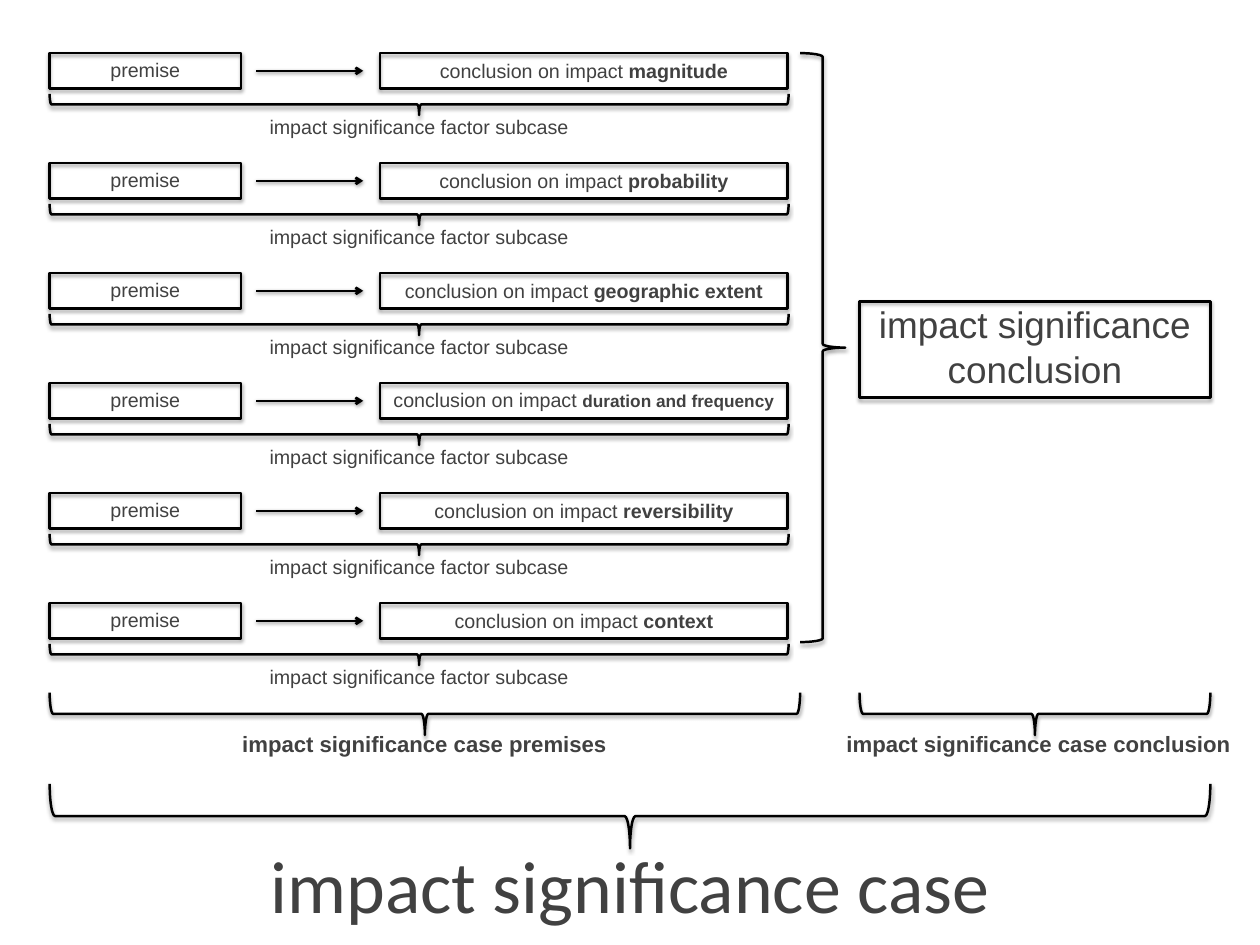
from dataclasses import dataclass
from lxml.etree import SubElement
from pptx import Presentation
from pptx.dml.color import RGBColor
from pptx.enum.shapes import MSO_CONNECTOR, MSO_SHAPE
from pptx.enum.text import MSO_ANCHOR, MSO_AUTO_SIZE, PP_ALIGN
from pptx.oxml.ns import qn
from pptx.util import Inches, Pt

FACTORS = [
    ("magnitude", None),
    ("probability", None),
    ("geographic extent", None),
    ("duration and frequency", 14),
    ("reversibility", None),
    ("context", None),
]
PREMISE = "premise"
LEAD = "conclusion on impact "
SUBCASE = "impact significance factor subcase"
RESULT = "impact significance conclusion"
PARTS = [
    ("impact significance case premises", 0.56, 8.47, 0.97, 7.64),
    ("impact significance case conclusion", 9.7, 3.96, 9.16, 5.12),
]
CASE = "impact significance case"


@dataclass
class Theme:
    ink: RGBColor = RGBColor(0, 0, 0)
    text: RGBColor = RGBColor(0x41, 0x41, 0x41)
    face: str = "Arial"
    head: str = "Calibri"
    small: int = 16
    label: int = 18
    large: int = 30
    title: int = 60
    frame: float = 2.25
    rule: float = 2


THEME = Theme()
LEFT, WIDE = 0.56, 13.1
FIRST, LAST = 0.6, 6.81
ROW_W, BOX_H = 8.34, 0.4
PREM_W, CONC_X, CONC_W = 2.16, 4.29, 4.6

deck = Presentation()
deck.slide_width, deck.slide_height = Inches(14.22), Inches(10.67)
slide = deck.slides.add_slide(deck.slide_layouts[5])
shapes = slide.shapes


def place(*sizes):
    return [Inches(size) for size in sizes]


def style(shape, width, drop, alpha):
    shape.line.color.rgb = THEME.ink
    shape.line.width = Pt(width)
    props = shape.element.spPr
    effects = SubElement(props, qn("a:effectLst"))
    shadow = SubElement(effects, qn("a:outerShdw"), blurRad=str(Pt(3.1)),
                        dist=str(Pt(drop)), dir="5400000", rotWithShape="0")
    tint = SubElement(shadow, qn("a:srgbClr"), val=str(THEME.ink))
    SubElement(tint, qn("a:alpha"), val=str(alpha * 1000))


def write(frame, runs, size, face, bold=False):
    frame.word_wrap = True
    frame.auto_size = MSO_AUTO_SIZE.NONE
    frame.vertical_anchor = MSO_ANCHOR.TOP
    para = frame.paragraphs[0]
    para.alignment = PP_ALIGN.CENTER
    font = para.font
    font.name, font.size, font.bold = face, Pt(size), bold
    font.color.rgb = THEME.text
    for text, strong, points in runs:
        run = para.add_run()
        run.text = text
        if strong:
            run.font.bold = True
        if points:
            run.font.size = Pt(points)


def label(spot, runs, size=THEME.small, bold=False):
    box = shapes.add_textbox(*place(*spot))
    write(box.text_frame, runs, size, THEME.face, bold)


def plain(text):
    return [(text, False, None)]


def frame(*spot):
    box = shapes.add_shape(MSO_SHAPE.RECTANGLE, *place(*spot))
    box.fill.background()
    style(box, THEME.frame, 1.8, 35)


def brace(x, y, width, height, down=True):
    if down:
        x, y = x + (width - height) / 2, y + (height - width) / 2
        width, height = height, width
    curve = shapes.add_shape(MSO_SHAPE.RIGHT_BRACE, *place(x, y, width, height))
    curve.rotation = 90 if down else 0
    curve.fill.background()
    style(curve, THEME.rule, 1.6, 38)


def arrow(start, end, y):
    line = shapes.add_connector(MSO_CONNECTOR.STRAIGHT, *place(start, y, end, y))
    style(line, THEME.rule, 1.6, 38)
    SubElement(line.element.spPr.find(qn("a:ln")), qn("a:tailEnd"), type="arrow")


title = shapes.title
title.left, title.top, title.width, title.height = place(LEFT, 9.43, WIDE, 1.1)
write(title.text_frame, plain(CASE), THEME.title, THEME.head)
brace(LEFT, 8.85, WIDE, 0.73)

step = (LAST - FIRST) / (len(FACTORS) - 1)
for index, (factor, points) in enumerate(FACTORS):
    top = FIRST + index * step
    frame(LEFT, top, PREM_W, BOX_H)
    label((LEFT, top, PREM_W, 0.37), plain(PREMISE))
    arrow(2.89, 4.1, top + BOX_H / 2)
    frame(CONC_X, top, CONC_W, BOX_H)
    label((CONC_X, top + 0.01, CONC_W, 0.37),
          [(LEAD, False, None), (factor, True, points)])
    brace(LEFT, top + 0.46, ROW_W, 0.24)
    label((LEFT, top + 0.65, ROW_W, 0.37), plain(SUBCASE))

brace(9.03, FIRST, 0.51, 6.65, down=False)
frame(9.7, 3.4, 3.96, 1.09)
label((9.7, 3.36, 3.96, 1.1), plain(RESULT), THEME.large)

for text, x, width, text_x, text_w in PARTS:
    brace(x, 7.82, width, 0.48)
    label((text_x, 8.2, text_w, 0.4), plain(text), THEME.label, True)

deck.save("out.pptx")
